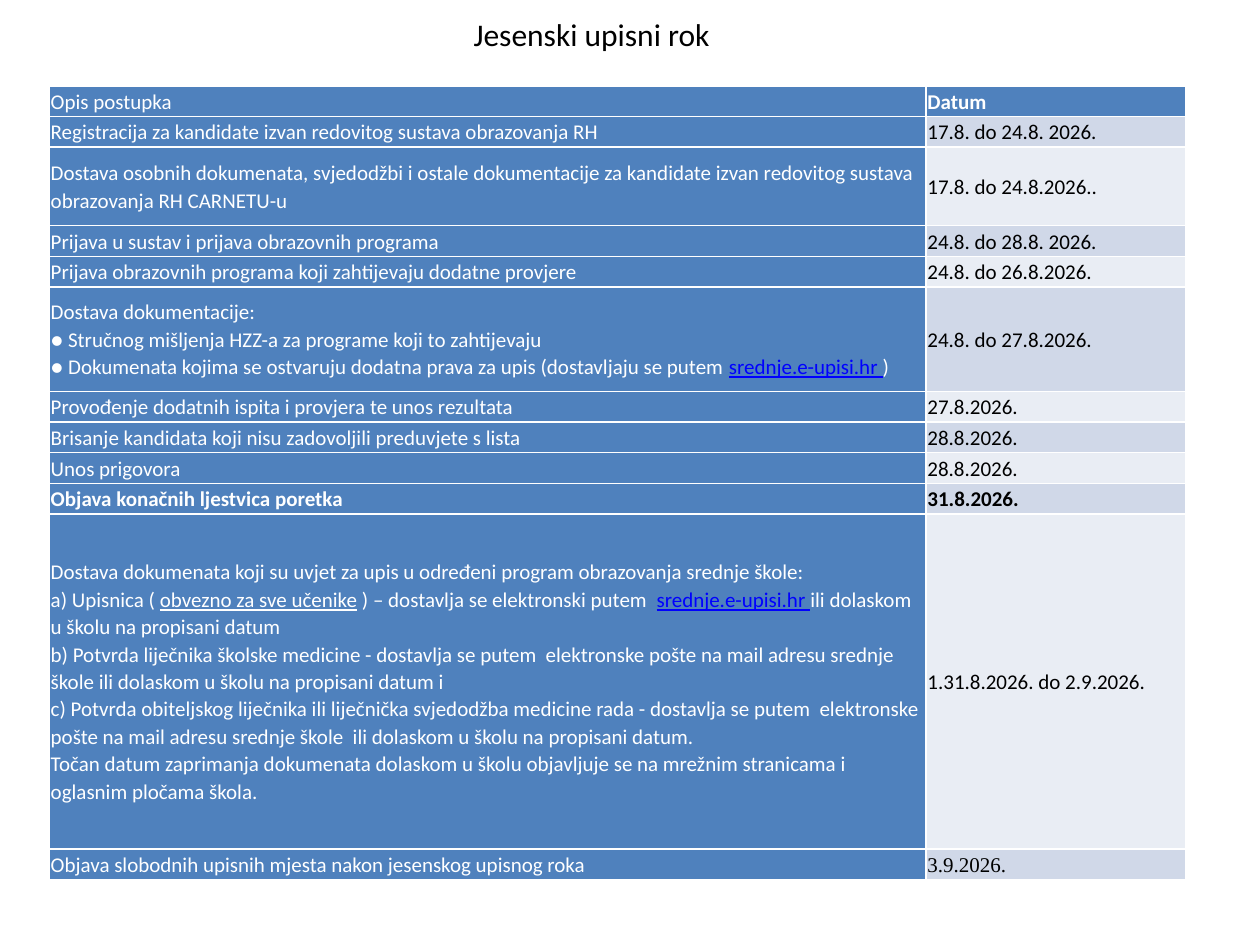
from pptx import Presentation
from pptx.dml.color import RGBColor
from pptx.enum.text import MSO_ANCHOR, MSO_AUTO_SIZE
from pptx.util import Pt

MIDDLE = MSO_ANCHOR.MIDDLE
GROW = MSO_AUTO_SIZE.SHAPE_TO_FIT_TEXT
BLUE, WHITE, BLACK, LINK = "4F81BD", "FFFFFF", "000000", "0000FF"
BANDS = ("E9EDF4", "D0D8E8")
COLS = (501, 148.5)
LOW = 17.5
SITE = ("srednje.e-upisi.hr ", {"color": LINK, "under": True})

# Each row: height, description paragraphs, date, format.
# A paragraph is a string, or a list of strings and (string, format) pairs.
ROWS = [
    (LOW, ["Opis postupka"], "Datum", {}),
    (LOW, ["Registracija za kandidate izvan redovitog sustava obrazovanja RH "],
     "17.8. do 24.8. 2026.", {}),
    (45, ["Dostava osobnih dokumenata, svjedodžbi i ostale dokumentacije za "
          "kandidate izvan redovitog sustava obrazovanja RH CARNETU-u"],
     "17.8. do 24.8.2026..", {}),
    (LOW, ["Prijava u sustav i prijava obrazovnih programa"],
     "24.8. do 28.8. 2026.", {}),
    (LOW, ["Prijava obrazovnih programa koji zahtijevaju dodatne provjere"],
     "24.8. do 26.8.2026.", {}),
    (59.75, ["Dostava dokumentacije:",
             "● Stručnog mišljenja HZZ-a za programe koji to zahtijevaju",
             ["● Dokumenata kojima se ostvaruju dodatna prava za upis "
              "(dostavljaju se putem ", SITE, ")"]],
     "24.8. do 27.8.2026.", {}),
    (LOW, ["Provođenje dodatnih ispita i provjera te unos rezultata"],
     "27.8.2026.", {}),
    (LOW, ["Brisanje kandidata koji nisu zadovoljili preduvjete s lista"],
     "28.8.2026.", {}),
    (LOW, ["Unos prigovora"], "28.8.2026.", {}),
    (LOW, ["Objava konačnih ljestvica poretka"], "31.8.2026.", {"bold": True}),
    (191.5, ["Dostava dokumenata koji su uvjet za upis u određeni program "
             "obrazovanja srednje škole:",
             ["a) Upisnica ( ", ("obvezno za sve učenike", {"under": True}),
              " ) – dostavlja se elektronski putem  ", SITE,
              "ili dolaskom u školu na propisani datum"],
             "b) Potvrda liječnika školske medicine - dostavlja se putem  "
             "elektronske pošte na mail adresu srednje škole ili dolaskom u "
             "školu na propisani datum i",
             "c) Potvrda obiteljskog liječnika ili liječnička svjedodžba "
             "medicine rada - dostavlja se putem  elektronske pošte na mail "
             "adresu srednje škole  ili dolaskom u školu na propisani datum.",
             "Točan datum zaprimanja dokumenata dolaskom u školu objavljuje se "
             "na mrežnim stranicama i oglasnim pločama škola."],
     "1.31.8.2026. do 2.9.2026.", {}),
    (LOW, ["Objava slobodnih upisnih mjesta nakon jesenskog upisnog roka"],
     "3.9.2026.", {"date_face": "Times New Roman"}),
]


def rgb(code):
    return RGBColor.from_string(code)


def add_text(para, text, size=12, face="Calibri", color=BLACK, bold=False,
             under=False):
    run = para.add_run()
    run.text = text
    font = run.font
    font.size, font.name = Pt(size), face
    font.bold, font.underline = bold, under
    font.color.rgb = rgb(color)


def fill_cell(cell, paras, fill, **style):
    cell.fill.solid()
    cell.fill.fore_color.rgb = rgb(fill)
    cell.vertical_anchor = MIDDLE
    cell.margin_left = cell.margin_right = Pt(0.75)
    cell.margin_top = cell.margin_bottom = Pt(0.75)
    frame = cell.text_frame
    for i, parts in enumerate(paras):
        para = frame.add_paragraph() if i else frame.paragraphs[0]
        para.line_spacing = 1.07
        for part in [parts] if isinstance(parts, str) else parts:
            text, extra = (part, {}) if isinstance(part, str) else part
            add_text(para, text, **{**style, **extra})


def add_title(slide):
    box = slide.shapes.add_textbox(Pt(263.5), Pt(5), Pt(306), Pt(29))
    frame = box.text_frame
    frame.word_wrap = True
    frame.auto_size = GROW
    add_text(frame.paragraphs[0], "Jesenski upisni rok", size=18)


def add_dates(slide):
    """Add the table of steps and their dates."""
    high = sum(row[0] for row in ROWS)
    table = slide.shapes.add_table(len(ROWS), len(COLS), Pt(28.25), Pt(49),
                                   Pt(sum(COLS)), Pt(high)).table
    table.first_col = True
    for col, width in zip(table.columns, COLS):
        col.width = Pt(width)
    for i, (height, steps, date, form) in enumerate(ROWS):
        table.rows[i].height = Pt(height)
        head, bold = i == 0, form.get("bold", False)
        fill_cell(table.cell(i, 0), steps, BLUE, color=WHITE, bold=bold)
        fill_cell(table.cell(i, 1), [date], BLUE if head else BANDS[i % 2],
                  color=WHITE if head else BLACK, bold=head or bold,
                  face=form.get("date_face", "Calibri"))


def main():
    deck = Presentation()
    deck.slide_width, deck.slide_height = Pt(720), Pt(540)
    slide = deck.slides.add_slide(deck.slide_layouts[6])
    add_dates(slide)
    add_title(slide)
    deck.save("out.pptx")


if __name__ == "__main__":
    main()
